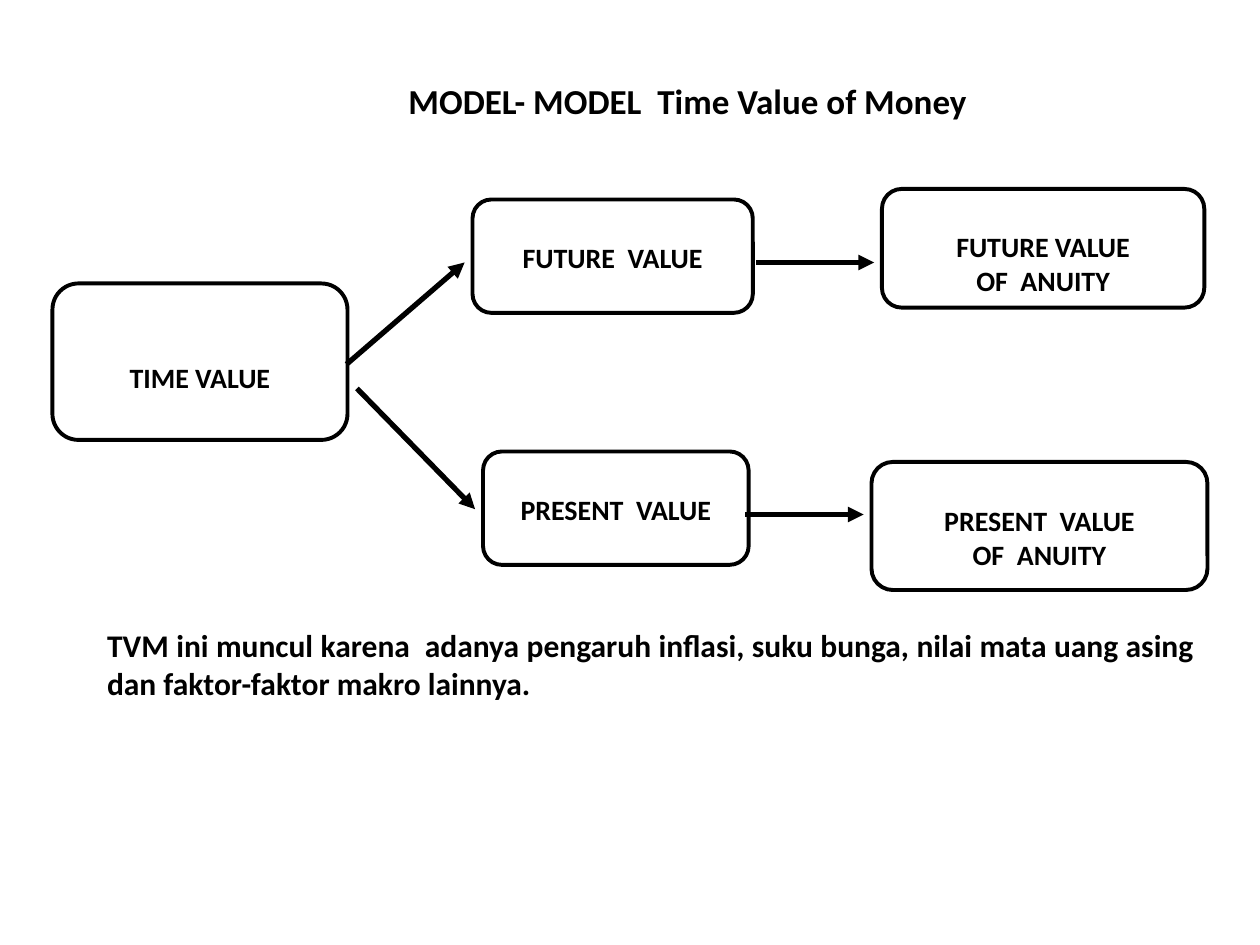
import pptx
import pptx.util
import pptx.dml.color
import pptx.enum.shapes
import pptx.enum.text
import pptx.oxml.ns
import lxml.etree

COLORS = {"ink": "000000", "paper": "FFFFFF"}
FONT = "Calibri"
ALIGN = pptx.enum.text.PP_ALIGN
UNIT = 1 / 12  # grid of 120 columns by 90 rows, in inches
LINE_HEIGHT = 0.27  # one 16 pt line, in inches


def grid(*values):
    return [pptx.util.Inches(v * UNIT) for v in values]


def rgb(name):
    return pptx.dml.color.RGBColor.from_string(COLORS[name])


def write(tf, text, size=16, align=ALIGN.CENTER, color="ink", bold=True):
    """Write each line of text as a formatted paragraph."""
    tf.word_wrap = True
    tf.auto_size = pptx.enum.text.MSO_AUTO_SIZE.NONE
    tf.vertical_anchor = pptx.enum.text.MSO_ANCHOR.TOP
    for i, line in enumerate(text.split("\n")):
        p = tf.paragraphs[0] if i == 0 else tf.add_paragraph()
        p.alignment = align
        p.space_before = pptx.util.Pt(0)
        r = p.add_run()
        r.text = line
        r.font.name = FONT
        r.font.size = pptx.util.Pt(size)
        r.font.bold = bold
        r.font.color.rgb = rgb(color)


class Diagram:
    def __init__(self, slide, box_line=2.25, arrow_line=3):
        self.s = slide
        self.box_line = pptx.util.Pt(box_line)
        self.arrow_line = pptx.util.Pt(arrow_line)

    def placeholder(self, index, area, text, **style):
        sp = self.s.placeholders[index]
        sp.left, sp.top, sp.width, sp.height = grid(*area)
        write(sp.text_frame, text, **style)
        # Plain text: no bullet and no hanging indent
        pPr = sp.text_frame.paragraphs[0]._p.get_or_add_pPr()
        pPr.set("marL", "0")
        pPr.set("indent", "0")
        lxml.etree.SubElement(pPr, pptx.oxml.ns.qn("a:buNone"))

    def box(self, area, text, lines_above=1):
        sp = self.s.shapes.add_shape(
            pptx.enum.shapes.MSO_SHAPE.ROUNDED_RECTANGLE, *grid(*area))
        sp.shadow.inherit = False
        sp.fill.solid()
        sp.fill.fore_color.rgb = rgb("paper")
        sp.line.color.rgb = rgb("ink")
        sp.line.width = self.box_line
        tf = sp.text_frame
        tf.margin_left = tf.margin_right = tf.margin_bottom = pptx.util.Inches(0.01)
        tf.margin_top = pptx.util.Inches(0.01 + lines_above * LINE_HEIGHT)
        write(tf, text)

    def arrow(self, x, y, rise=0, run=11.25):
        cn = self.s.shapes.add_connector(
            pptx.enum.shapes.MSO_CONNECTOR.STRAIGHT, *grid(x, y, x + run, y + rise))
        cn.line.color.rgb = rgb("ink")
        cn.line.width = self.arrow_line
        qn = pptx.oxml.ns.qn
        lxml.etree.SubElement(cn.line._get_or_add_ln(), qn("a:tailEnd"), type="triangle")
        lxml.etree.SubElement(cn._element.spPr, qn("a:effectLst"))


def main():
    prs = pptx.Presentation()
    prs.slide_width, prs.slide_height = grid(120, 90)
    d = Diagram(prs.slides.add_slide(prs.slide_layouts[1]))

    # Title and closing note
    d.placeholder(0, (32, 7, 67, 5.25), "MODEL- MODEL  Time Value of Money", size=20)
    d.placeholder(1, (9, 59, 106, 8.5),
                  "TVM ini muncul karena  adanya pengaruh inflasi, suku bunga, "
                  "nilai mata uang asing dan faktor-faktor makro lainnya. ",
                  size=18, align=ALIGN.JUSTIFY)

    # Root, its two values, and their annuities
    d.box((5, 27, 28.1, 14.9), "TIME VALUE", lines_above=2)
    d.box((45, 19, 26.7, 10.8), "FUTURE  VALUE")
    d.box((46, 43, 25.3, 10.8), "PRESENT  VALUE")
    d.box((84, 18, 30.7, 11.3), "FUTURE VALUE\nOF  ANUITY")
    d.box((83, 44, 32, 12.2), "PRESENT  VALUE\nOF  ANUITY")

    # Arrows: branches from the root, then across to the annuities
    d.arrow(33, 34.7, rise=-9.7)
    d.arrow(34, 37, rise=11.5)
    d.arrow(72, 25)
    d.arrow(71, 49)

    prs.save("out.pptx")


if __name__ == "__main__":
    main()
